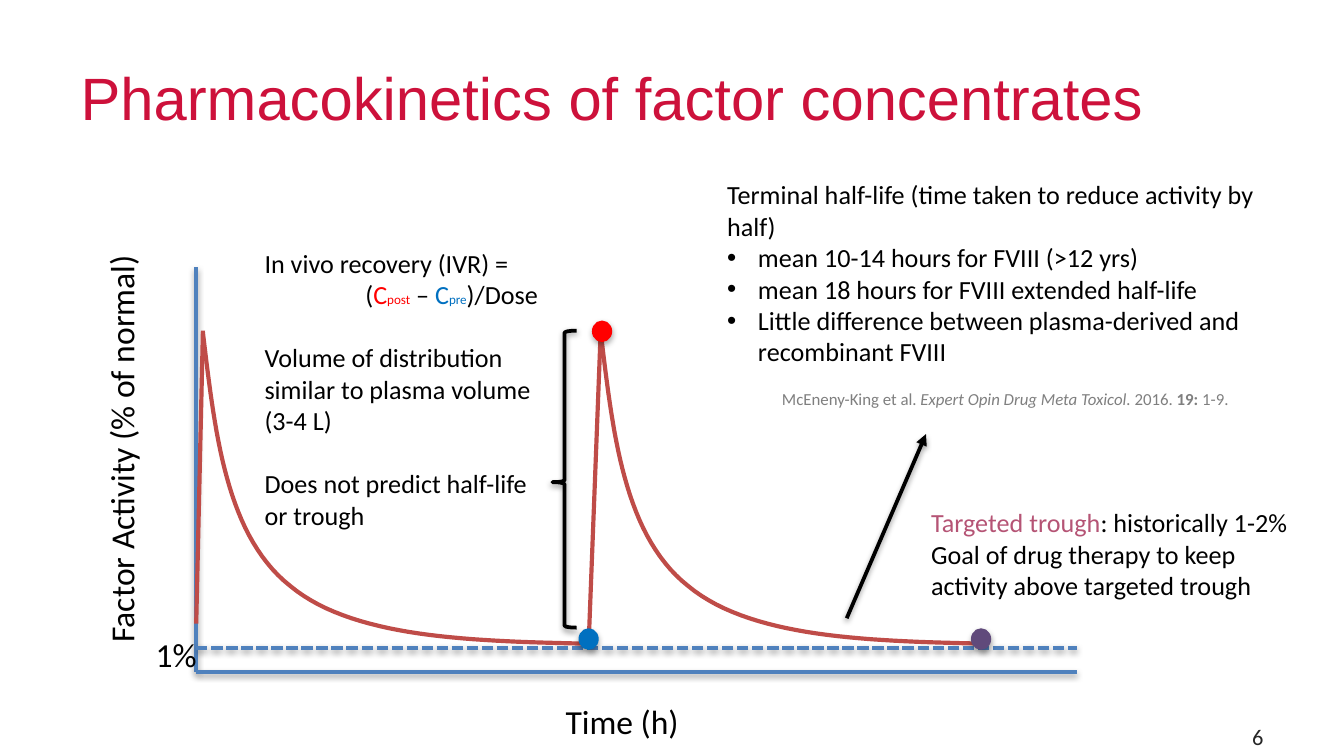
from lxml import etree
from pptx import Presentation
from pptx import util as u
from pptx.dml.color import RGBColor
from pptx.enum import dml, shapes, text
from pptx.oxml import ns

COLORS = {
    "title": "CD113B", "ink": "000000", "axis": "4F81BD", "curve": "BF4C48",
    "post": "FF0000", "pre": "0070C0", "trough": "604A7B",
    "target": "B55475", "citation": "7F7F7F", "number": "262626",
}
AXIS_LEFT, AXIS_RIGHT, AXIS_TOP, AXIS_BOTTOM = 1.46, 8.01, 1.99, 5
PEAK, TROUGH = 2.46, 4.79
DOSE_GAP = 2.96
# Bezier control points of the decay, relative to its peak
DECAY = [
    [(0, 0), (0.09, 0.75), (0.17, 1.51), (0.65, 1.89)],
    [(0.65, 1.89), (1.12, 2.28), (2, 2.3), (2.87, 2.32)],
]


def rgb(name):
    return RGBColor.from_string(COLORS[name])


def add_xml(parent, tag, **attributes):
    return etree.SubElement(parent, ns.qn(tag), attributes)


def set_effects(shape, opacity=None):
    """Replace the theme shadow by a soft one below, or by none."""
    effects = add_xml(shape._element.spPr, "a:effectLst")
    if opacity:
        shadow = add_xml(effects, "a:outerShdw", blurRad="40000", dist="20000",
                         dir="5400000", rotWithShape="0")
        color = add_xml(shadow, "a:srgbClr", val=COLORS["ink"])
        add_xml(color, "a:alpha", val=str(opacity * 1000))


def set_line(shape, color, width):
    shape.line.color.rgb = rgb(color)
    shape.line.width = u.Pt(width)


def add_line(slide, start, end, color, width=2, opacity=38, dashed=False, arrow=False):
    line = slide.shapes.add_connector(
        shapes.MSO_CONNECTOR.STRAIGHT, *[u.Inches(v) for v in (*start, *end)])
    set_line(line, color, width)
    if dashed:
        line.line.dash_style = dml.MSO_LINE.SQUARE_DOT
    if arrow:
        add_xml(line.line._get_or_add_ln(), "a:tailEnd", type="triangle")
    set_effects(line, opacity)


def add_preset(slide, kind, left, top, width, height):
    return slide.shapes.add_shape(
        kind, *[u.Inches(v) for v in (left, top, width, height)])


def add_dot(slide, left, top, color):
    dot = add_preset(slide, shapes.MSO_SHAPE.OVAL, left, top, 0.14, 0.15)
    dot.fill.solid()
    dot.fill.fore_color.rgb = rgb(color)
    set_line(dot, color, 0.75)
    set_effects(dot, 35)


def add_brace(slide):
    brace = add_preset(slide, shapes.MSO_SHAPE.RIGHT_BRACE, 4.11, PEAK, 0.18, 2.21)
    brace.rotation = 180
    brace.adjustments[0], brace.adjustments[1] = 0.08, 0.49
    brace.fill.background()
    set_line(brace, "ink", 2)
    set_effects(brace, 38)


def bezier(controls, t):
    weights = ((1 - t) ** 3, 3 * t * (1 - t) ** 2, 3 * t ** 2 * (1 - t), t ** 3)
    return tuple(sum(w * p[axis] for w, p in zip(weights, controls)) for axis in (0, 1))


def add_decay(slide, left, top, steps=30):
    points = [bezier(part, i / steps) for part in DECAY for i in range(1, steps + 1)]
    builder = slide.shapes.build_freeform(
        u.Inches(left), u.Inches(top), scale=1.0)
    builder.add_line_segments(
        [(u.Inches(left + x), u.Inches(top + y)) for x, y in points], close=False)
    curve = builder.convert_to_shape()
    curve.fill.background()
    set_line(curve, "curve", 2.25)
    set_effects(curve)


def add_spans(para, spans, size, color="ink"):
    """Fill a paragraph with strings or (string, font settings) pairs."""
    para.font.size = u.Pt(size)
    para.font.name = "Calibri"
    para.font.color.rgb = rgb(color)
    for item in spans:
        words, settings = (item, {}) if isinstance(item, str) else item
        span = para.add_run()
        span.text = words
        for key, value in settings.items():
            if key == "color":
                span.font.color.rgb = rgb(value)
            else:
                setattr(span.font, key, value)


def place(box, left, top, width, height):
    box.left, box.top, box.width, box.height = [
        u.Inches(v) for v in (left, top, width, height)]


def add_text(slide, area, paragraphs, size=14, color="ink", wrap=True):
    box = slide.shapes.add_textbox(*[u.Inches(v) for v in area])
    frame = box.text_frame
    frame.word_wrap = wrap
    for i, spans in enumerate(paragraphs):
        para = frame.add_paragraph() if i else frame.paragraphs[0]
        add_spans(para, spans, size, color)
    return box


def fill_title(title):
    place(title, 0.5, 0.4, 9, 0.59)
    frame = title.text_frame
    frame.text = "Pharmacokinetics of factor concentrates"
    frame.auto_size = text.MSO_AUTO_SIZE.NONE
    frame.vertical_anchor = text.MSO_ANCHOR.TOP
    frame.margin_left, frame.margin_top = u.Inches(0.1), u.Inches(0.05)
    para = frame.paragraphs[0]
    para.alignment = text.PP_ALIGN.LEFT
    para.font.size = u.Pt(32)
    para.font.name = "Arial"
    para.font.color.rgb = rgb("title")


def fill_half_life(body):
    place(body, 5.31, 1.28, 4.4, 1.75)
    frame = body.text_frame
    frame.auto_size = text.MSO_AUTO_SIZE.NONE
    lines = [
        "Terminal half-life (time taken to reduce activity by half)",
        "mean 10-14 hours for FVIII (>12 yrs)",
        "mean 18 hours for FVIII extended half-life",
        "Little difference between plasma-derived and recombinant FVIII",
    ]
    for i, line in enumerate(lines):
        para = frame.add_paragraph() if i else frame.paragraphs[0]
        para.space_before = u.Pt(0)
        props = para._p.get_or_add_pPr()
        indent = u.Inches(0.23) if i else 0
        props.set("marL", str(indent))
        props.set("indent", str(-indent))
        if i:
            add_xml(props, "a:buFont", typeface="Arial")
            add_xml(props, "a:buChar", char="•")
        else:
            add_xml(props, "a:buNone")
        add_spans(para, [line], 14)


def add_recovery(slide):
    small = u.Pt(7)
    box = add_text(slide, (1.87, 1.79, 2.27, 2.46), [
        ["In vivo recovery (IVR) ="],
        ["(", ("C", {"color": "post"}), ("post", {"color": "post", "size": small}), " – ",
         ("C", {"color": "pre"}), ("pre", {"color": "pre", "size": small}), ")/Dose"],
        ["Volume of distribution similar to plasma volume (3-4 L)"],
        ["Does not predict half-life or trough"],
    ])
    paragraphs = box.text_frame.paragraphs
    paragraphs[1]._p.get_or_add_pPr().set("marL", str(u.Inches(0.75)))
    for para in paragraphs[2:]:
        para.space_before = u.Pt(17)


def add_plot(slide):
    origin = (AXIS_LEFT, AXIS_BOTTOM)
    add_line(slide, (AXIS_LEFT, AXIS_TOP), origin, "axis")
    add_line(slide, origin, (AXIS_RIGHT, AXIS_BOTTOM), "axis")
    add_line(slide, (AXIS_LEFT, 4.82), (AXIS_RIGHT, 4.82), "axis", dashed=True)
    for dose, start in enumerate([(AXIS_LEFT, 4.64), (4.38, TROUGH)]):
        peak = 1.51 + dose * DOSE_GAP
        add_line(slide, start, (peak, PEAK), "curve", 2.25, opacity=None)
        add_decay(slide, peak, PEAK + 0.01)
    add_text(slide, (4.11, 5.17, 1.06, 0.4), [["Time (h)"]], 18, wrap=False)
    add_text(slide, (1.06, 4.67, 0.51, 0.4), [["1%"]], 18, wrap=False)
    label = add_text(slide, (-0.66, 3.12, 3.12, 0.4),
                     [["Factor Activity (% of normal)"]], 18, wrap=False)
    label.rotation = 270
    add_brace(slide)
    add_dot(slide, 4.41, 2.39, "post")
    add_dot(slide, 4.31, 4.68, "pre")
    add_dot(slide, 7.23, 4.68, "trough")
    add_line(slide, (6.3, 4.6), (6.89, 3.23), "ink", arrow=True)


def main():
    deck = Presentation()
    deck.slide_width = u.Inches(10)
    deck.slide_height = deck.slide_width * 9 // 16
    slide = deck.slides.add_slide(deck.slide_layouts[1])
    fill_title(slide.shapes.title)
    fill_half_life(slide.placeholders[1])
    add_plot(slide)
    add_recovery(slide)
    add_text(slide, (6.83, 3.72, 2.96, 0.81), [
        [("Targeted trough", {"color": "target"}), ": historically 1-2%"],
        ["Goal of drug therapy to keep activity above targeted trough"],
    ])
    add_text(slide, (5.72, 2.84, 3.66, 0.25), [[
        "McEneny-King et al. ", ("Expert Opin Drug Meta Toxicol. ", {"italic": True}),
        "2016. ", ("19:", {"bold": True}), " 1-9.",
    ]], 9, "citation")
    number = add_text(slide, (7.17, 5.33, 2.33, 0.3), [["6"]], 12, "number")
    number.text_frame.vertical_anchor = text.MSO_ANCHOR.MIDDLE
    number.text_frame.paragraphs[0].alignment = text.PP_ALIGN.RIGHT
    deck.save("out.pptx")


if __name__ == "__main__":
    main()
